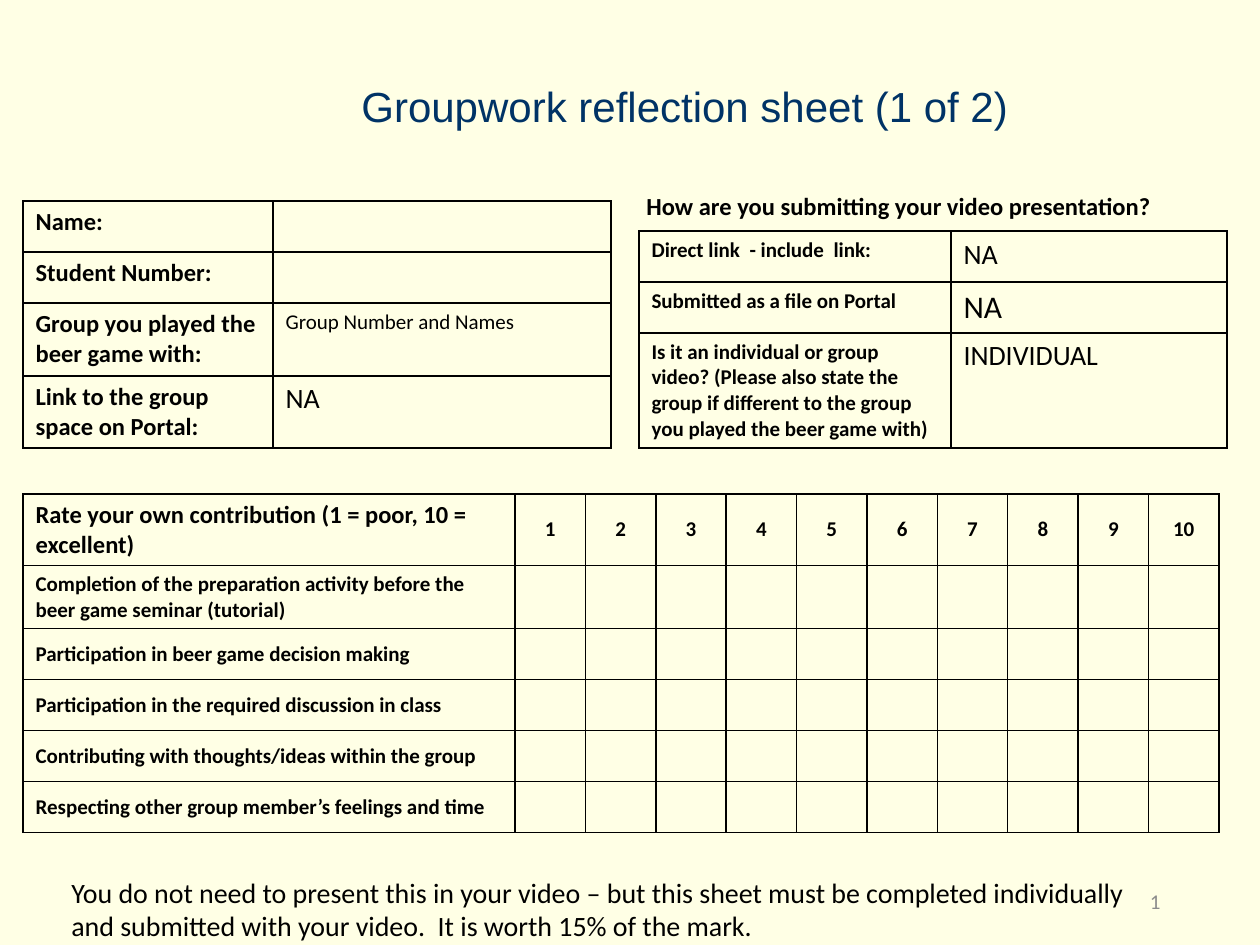
"""Builds the groupwork reflection sheet slide with its three form tables."""
from lxml import etree
from pptx import Presentation
from pptx.dml.color import RGBColor
from pptx.enum.text import MSO_ANCHOR, PP_ALIGN
from pptx.oxml.ns import qn
from pptx.util import Pt

SCALE = 914400 / 126
LEFT, CENTER, RIGHT = PP_ALIGN.LEFT, PP_ALIGN.CENTER, PP_ALIGN.RIGHT
TOP, MIDDLE = MSO_ANCHOR.TOP, MSO_ANCHOR.MIDDLE
BLACK = "000000"


def px(length):
    """Turn pixels into EMU."""
    return round(length * SCALE)


def write(frame, text, size=12, bold=False, color=BLACK, font="Calibri", align=LEFT, spacing=1.0):
    """Write one formatted paragraph into a text frame."""
    frame.word_wrap = True
    paragraph = frame.paragraphs[0]
    paragraph.text = text
    paragraph.alignment = align
    paragraph.line_spacing = spacing
    paragraph.font.size = Pt(size)
    for run in paragraph.runs:
        run.font.size = Pt(size)
        run.font.bold = bold
        run.font.name = font
        run.font.color.rgb = RGBColor.from_string(color)


presentation = Presentation()
presentation.slide_width = px(1260)
presentation.slide_height = px(945)
slide = presentation.slides.add_slide(presentation.slide_layouts[6])
slide.background.fill.solid()
slide.background.fill.fore_color.rgb = RGBColor.from_string("FFFFE5")

text_boxes = [
    ((349, 43, 702, 132), MIDDLE, "Groupwork reflection sheet (1 of 2)",
     {"size": 24, "color": "003366", "font": "Arial", "spacing": 0.9}),
    ((634, 185, 593, 43), TOP, "How are you submitting your video presentation?",
     {"size": 14, "bold": True}),
    ((890, 876, 283, 50), MIDDLE, "1", {"color": "8C8C8C", "align": RIGHT}),
    ((59, 869, 1124, 81), TOP,
     "You do not need to present this in your video – but this sheet must be completed "
     "individually and submitted with your video.  It is worth 15% of the mark.", {"size": 16}),
]
for box, anchor, text, style in text_boxes:
    frame = slide.shapes.add_textbox(*map(px, box)).text_frame
    frame.vertical_anchor = anchor
    write(frame, text, **style)

heading = {"size": 14, "bold": True}
label = {"size": 12, "bold": True}
score = {**label, "align": CENTER}
answer = {"size": 16}
blank = ("", {})

details = [
    [("Name:", heading), blank],
    [("Student Number:", heading), blank],
    [("Group you played the beer game with:", heading), ("Group Number and Names", {})],
    [("Link to the group space on Portal:", heading), ("NA", answer)],
]
submission = [
    [("Direct link  - include  link:", label), ("NA", answer)],
    [("Submitted as a file on Portal", label), ("NA", {"size": 18})],
    [("Is it an individual or group video? (Please also state the group if different "
      "to the group you played the beer game with)", label), ("INDIVIDUAL", answer)],
]
criteria = [
    "Completion of the preparation activity before the beer game seminar (tutorial)",
    "Participation in beer game decision making",
    "Participation in the required discussion in class",
    "Contributing with thoughts/ideas within the group",
    "Respecting other group member’s feelings and time",
]
ratings = [[("Rate your own contribution (1 = poor, 10 = excellent)", heading)]
           + [(str(number), score) for number in range(1, 11)]]
ratings += [[(criterion, label)] + [blank] * 10 for criterion in criteria]

tables = [
    (23, 201, [250, 338], [51, 51, 73, 72], TOP, details),
    (639, 231, [312, 276], [51, 51, 115], TOP, submission),
    (23, 494, [492] + [70.4] * 10, [71, 63] + [51] * 4, MIDDLE, ratings),
]
for left, top, widths, heights, anchor, rows in tables:
    table = slide.shapes.add_table(len(rows), len(widths), px(left), px(top),
                                   px(sum(widths)), px(sum(heights))).table
    table.first_row = table.horz_banding = False
    for column, width in zip(table.columns, widths):
        column.width = px(width)
    for row, height, contents in zip(table.rows, heights, rows):
        row.height = px(height)
        for cell, (text, style) in zip(row.cells, contents):
            write(cell.text_frame, text, **style)
            cell.vertical_anchor = anchor
            properties = cell._tc.get_or_add_tcPr()
            for side in ("a:lnL", "a:lnR", "a:lnT", "a:lnB"):
                border = etree.SubElement(properties, qn(side), w=str(Pt(1)))
                fill = etree.SubElement(border, qn("a:solidFill"))
                etree.SubElement(fill, qn("a:srgbClr"), val=BLACK)
            cell.fill.background()

presentation.save("out.pptx")
